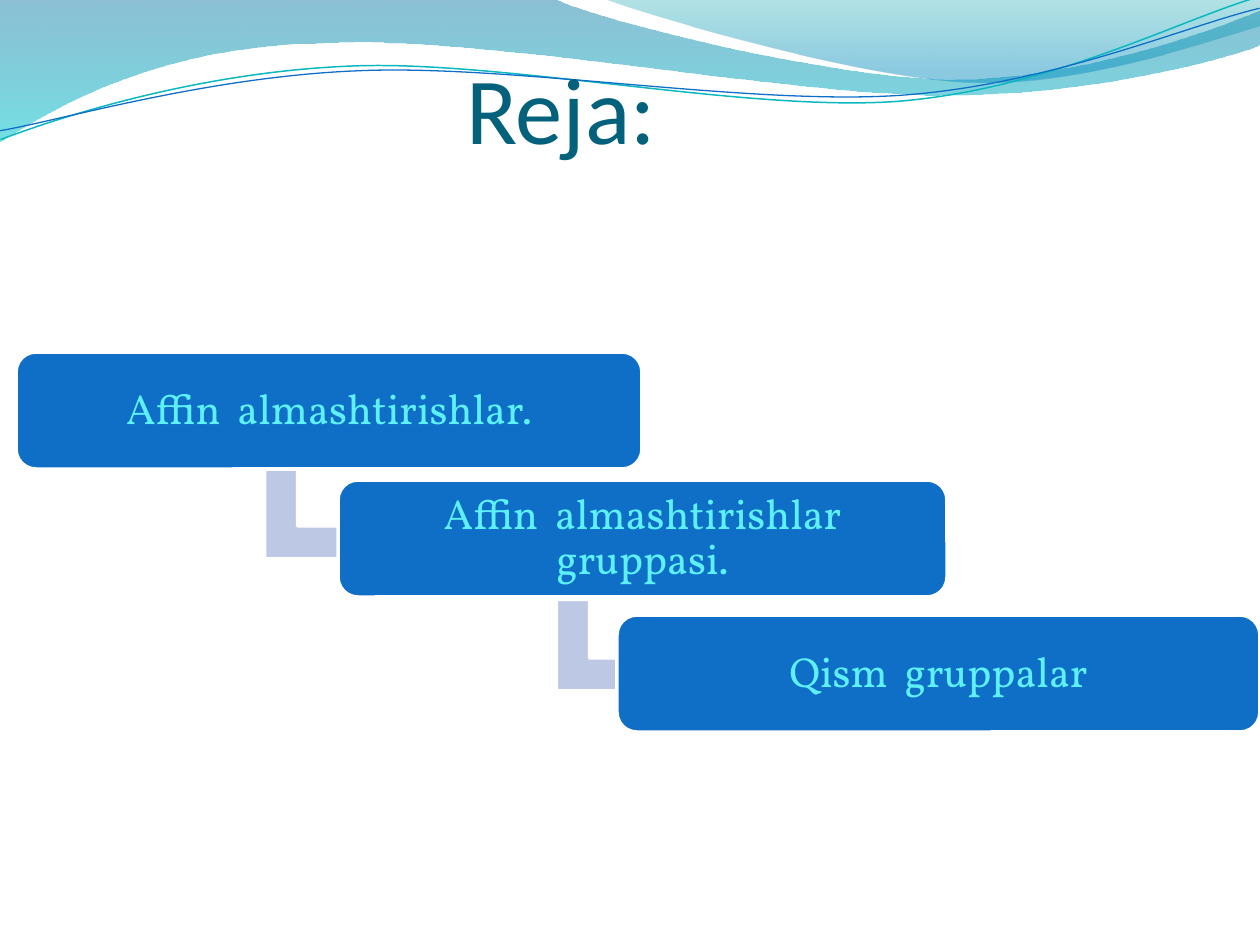
from dataclasses import dataclass

from lxml import etree
from pptx import Presentation
from pptx import util as u
from pptx.dml.color import RGBColor
from pptx.enum import shapes, text
from pptx.oxml.ns import qn

PX = 914400 / 126


@dataclass(frozen=True)
class Theme:
    """Colours, fonts and type sizes of the slide."""
    title: str = "04617B"
    step: str = "0F6FC6"
    step_text: str = "5EF0F7"
    arrow: str = "BDC8E5"
    border: str = "FFFFFF"
    teal_line: str = "0AB8BF"
    blue_line: str = "0F6FC6"
    back_wave: tuple = ((0, "0074A1", 45), (1, "00C6CF", 55))
    front_wave: tuple = ((0, "00A1A9", 30), (0.8, "008BBF", 45))
    title_font: str = "Calibri"
    step_font: str = "Vollkorn"
    title_size: int = 54
    step_size: int = 24


THEME = Theme()

BACK_WAVE = ((0, 0), (554, -1), (600, 21, 837, 79, 955, 79),
             (1075, 79, 1207, 33, 1260, 11), (1261, 45),
             (1239, 55, 1096, 96, 940, 95), (784, 95, 481, 35, 324, 43),
             (163, 45, 58, 105, -1, 142), (0, 0))
FRONT_WAVE = ((604, -1), (641, 14, 859, 78, 969, 82),
              (1079, 87, 1211, 40, 1260, 26), (1260, 0), (604, -1))
TEAL_CURVE = ((-2, 110), (59, 90, 199, 52, 350, 53),
              (499, 53, 745, 118, 896, 114), (1049, 109, 1184, 45, 1260, 27))
BLUE_CURVE = ((-2, 101), (57, 94, 207, 57, 357, 58),
              (509, 58, 750, 112, 902, 108), (1052, 104, 1188, 52, 1262, 38))
CURVE_ROTATION = 357.3

STEPS = (("Affin  almashtirishlar.", (0, 0, 626, 117)),
         ("Affin  almashtirishlar gruppasi.", (322, 128, 609, 117)),
         ("Qism  gruppalar", (601, 263, 643, 117)))
ARROWS = ((255, 109, 100, 113), (547, 241, 100, 113))


def emu(*lengths):
    """Turn px lengths into EMU."""
    return [u.Emu(round(length * PX)) for length in lengths]


def rgb(value):
    """Make a colour from its hex value."""
    return RGBColor.from_string(value)


def add_path(slide, left, top, path, close):
    """Draw line and cubic segments from the given corner."""
    points = [emu(left + x, top + y) for segment in path
              for x, y in zip(segment[::2], segment[1::2])]
    builder = slide.shapes.build_freeform(*points[0], scale=1.0)
    builder.add_line_segments(points[1:], close=close)
    shape = builder.convert_to_shape()
    shape.shadow.inherit = False
    lines = shape._element.spPr.iter(qn("a:lnTo"))
    lines = iter(list(lines))
    for segment in path[1:]:
        line = next(lines)
        if len(segment) == 6:
            line.tag_name = None
            curve = etree.Element(qn("a:cubicBezTo"))
            line.addprevious(curve)
            for part in (line, next(lines), next(lines)):
                curve.append(part[0])
                part.getparent().remove(part)
    return shape


def add_wave(slide, left, top, path, stops):
    """Draw a filled wave with a translucent vertical gradient."""
    shape = add_path(slide, left, top, path, True)
    shape.line.fill.background()
    shape.fill.gradient()
    shape.fill.gradient_angle = 270
    for stop, (position, colour, _) in zip(shape.fill.gradient_stops, stops):
        stop.position = position
        stop.color.rgb = rgb(colour)
    colours = shape._element.spPr.iter(qn("a:srgbClr"))
    for element, (_, _, opacity) in zip(colours, stops):
        etree.SubElement(element, qn("a:alpha"), val=str(opacity * 1000))


def add_curve(slide, left, top, path, colour, width):
    """Draw a thin open curve, slightly turned."""
    shape = add_path(slide, left, top, path, False)
    shape.rotation = CURVE_ROTATION
    shape.fill.background()
    shape.line.color.rgb = rgb(colour)
    shape.line.width = u.Pt(width)


def add_header(slide, left, top):
    """Draw the waves and curves along the top edge."""
    add_wave(slide, left, top, BACK_WAVE, THEME.back_wave)
    add_wave(slide, left, top, FRONT_WAVE, THEME.front_wave)
    add_curve(slide, left, top, TEAL_CURVE, THEME.teal_line, 0.85)
    add_curve(slide, left, top, BLUE_CURVE, THEME.blue_line, 0.75)


def write(shape, words, font, size, colour, anchor, insets):
    """Write one centred paragraph in a shape and return it."""
    frame = shape.text_frame
    frame.word_wrap = True
    frame.vertical_anchor = anchor
    (frame.margin_left, frame.margin_top,
     frame.margin_right, frame.margin_bottom) = emu(*insets)
    paragraph = frame.paragraphs[0]
    paragraph.alignment = text.PP_ALIGN.CENTER
    run = paragraph.add_run()
    run.text = words
    run.font.name = font
    run.font.size = u.Pt(size)
    run.font.color.rgb = rgb(colour)
    return paragraph


def add_title(slide, left, top, width, height):
    """Place the slide title."""
    box = slide.shapes.add_textbox(*emu(left, top, width, height))
    write(box, "Reja:", THEME.title_font, THEME.title_size, THEME.title,
          text.MSO_ANCHOR.BOTTOM, (0, 6, 0, 0))


def add_block(slide, kind, box, colour, adjustments):
    """Draw a filled preset shape with a white border."""
    shape = slide.shapes.add_shape(kind, *emu(*box))
    shape.shadow.inherit = False
    shape.fill.solid()
    shape.fill.fore_color.rgb = rgb(colour)
    shape.line.color.rgb = rgb(THEME.border)
    shape.line.width = u.Pt(2)
    for index, value in enumerate(adjustments):
        shape.adjustments[index] = value
    return shape


def add_steps(slide, left, top):
    """Draw the descending steps, with bent arrows beneath them."""
    for x, y, width, height in ARROWS:
        arrow = add_block(slide, shapes.MSO_SHAPE.BENT_UP_ARROW,
                          (left + x, top + y, width, height),
                          THEME.arrow, (0.33, 0.25, 0.36))
        arrow.rotation = 90
    for words, (x, y, width, height) in STEPS:
        step = add_block(slide, shapes.MSO_SHAPE.ROUNDED_RECTANGLE,
                         (left + x, top + y, width, height), THEME.step, (0.17,))
        paragraph = write(step, words, THEME.step_font, THEME.step_size,
                          THEME.step_text, text.MSO_ANCHOR.MIDDLE, (13,) * 4)
        paragraph.line_spacing = 0.9


def main():
    """Build and save the plan slide."""
    presentation = Presentation()
    presentation.slide_width, presentation.slide_height = emu(1260, 945)
    slide = presentation.slides.add_slide(presentation.slide_layouts[6])
    add_header(slide, 0, 0)
    add_title(slide, 302, 75, 518, 88)
    add_steps(slide, 16, 352)
    presentation.save("out.pptx")


if __name__ == "__main__":
    main()
